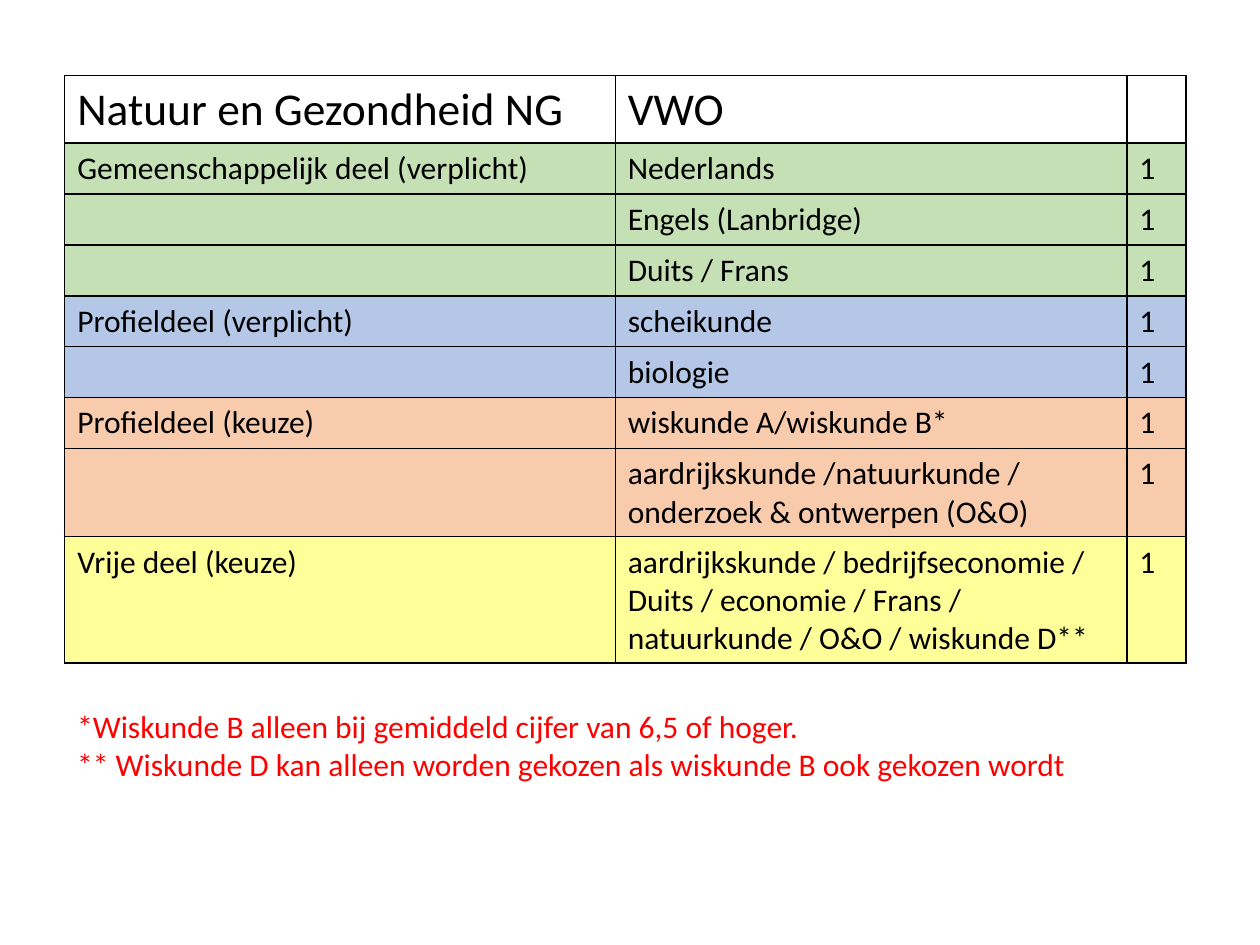
from pptx import Presentation
from pptx.util import Pt
from pptx.dml.color import RGBColor as RGB
from pptx.oxml.ns import qn
from lxml.etree import SubElement as Sub


def color(hex_code):
    return RGB.from_string(hex_code)


def style(frame, size, hex_code):
    for paragraph in frame.paragraphs:
        for run in paragraph.runs:
            run.font.name = "Calibri"
            run.font.size = Pt(size)
            run.font.color.rgb = color(hex_code)


GREEN, BLUE, ORANGE, YELLOW = "C5E0B4", "B4C7E7", "F8CBAD", "FFFF99"

# Part, subject, count, row colour
subjects = [
    ("Natuur en Gezondheid NG", "VWO", "", None),
    ("Gemeenschappelijk deel (verplicht)", "Nederlands", "1", GREEN),
    ("", "Engels (Lanbridge)", "1", GREEN),
    ("", "Duits / Frans", "1", GREEN),
    ("Profieldeel (verplicht)", "scheikunde", "1", BLUE),
    ("", "biologie", "1", BLUE),
    ("Profieldeel (keuze)", "wiskunde A/wiskunde B*", "1", ORANGE),
    ("", "aardrijkskunde /natuurkunde / onderzoek & ontwerpen (O&O)", "1", ORANGE),
    ("Vrije deel (keuze)",
     "aardrijkskunde / bedrijfseconomie /\nDuits / economie / Frans /\n"
     "natuurkunde / O&O / wiskunde D**", "1", YELLOW),
]
column_widths = [314.6, 292.3, 33.8]
row_heights = [38.8] + [29.1] * 6 + [50.3, 72]

deck = Presentation()
deck.slide_width, deck.slide_height = Pt(720), Pt(540)
slide = deck.slides.add_slide(deck.slide_layouts[6])

# Footnotes
notes = slide.shapes.add_textbox(Pt(37), Pt(400.5), Pt(618), Pt(51)).text_frame
notes.word_wrap = True
notes.text = ("*Wiskunde B alleen bij gemiddeld cijfer van 6,5 of hoger.\n"
              "** Wiskunde D kan alleen worden gekozen als wiskunde B ook gekozen wordt")
style(notes, 18, "FF0000")

# Subject table
profile = slide.shapes.add_table(
    len(subjects), len(column_widths), Pt(37), Pt(43),
    Pt(sum(column_widths)), Pt(sum(row_heights))).table
profile.first_row = profile.horz_banding = False
for column, width in zip(profile.columns, column_widths):
    column.width = Pt(width)
for row, height in zip(profile.rows, row_heights):
    row.height = Pt(height)

for r, (*texts, row_fill) in enumerate(subjects):
    for c, text in enumerate(texts):
        cell = profile.cell(r, c)
        if text:
            cell.text_frame.text = text
            style(cell.text_frame, 26 if r == 0 else 18, "000000")

        # Black borders come before the fill in the cell properties
        props = cell._tc.get_or_add_tcPr()
        for side in ("a:lnL", "a:lnR", "a:lnT", "a:lnB"):
            border = Sub(props, qn(side), w=str(Pt(1)))
            Sub(Sub(border, qn("a:solidFill")), qn("a:srgbClr"), val="000000")
        if row_fill:
            cell.fill.solid()
            cell.fill.fore_color.rgb = color(row_fill)
        else:
            cell.fill.background()

deck.save("out.pptx")
